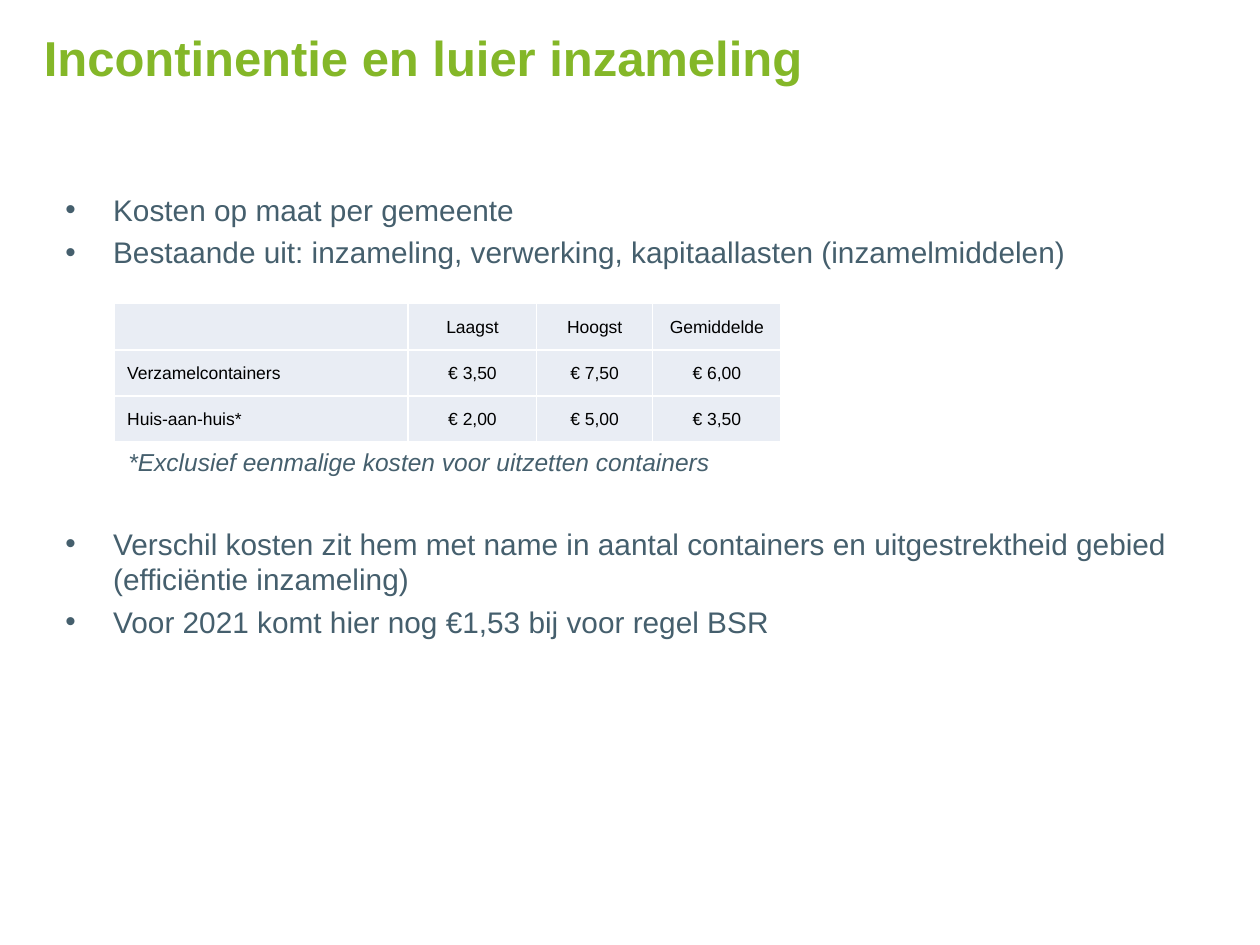
from dataclasses import dataclass

from lxml.etree import SubElement
from pptx import Presentation
from pptx.dml.color import RGBColor
from pptx.enum.text import MSO_ANCHOR, PP_ALIGN
from pptx.oxml.ns import qn
from pptx.util import Inches, Pt

FONT = "Arial"
GREEN, SLATE, BLACK, WHITE, PALE = "84B728", "455F6D", "000000", "FFFFFF", "E9EDF4"


@dataclass
class TextBlock:
    left: float
    top: float
    width: float
    height: float
    lines: list[str]
    size: float = 17
    color: str = SLATE
    bold: bool = False
    italic: bool = False
    bullets: bool = False


def rgb(color: str) -> RGBColor:
    return RGBColor.from_string(color)


def style(paragraph, size: float, color: str, bold=False, italic=False) -> None:
    font = paragraph.font
    font.name, font.size = FONT, Pt(size)
    font.bold, font.italic = bold, italic
    font.color.rgb = rgb(color)


def add_bullet(paragraph) -> None:
    properties = paragraph._p.get_or_add_pPr()
    properties.set("marL", str(Inches(0.38)))
    properties.set("indent", str(-Inches(0.38)))
    SubElement(properties, qn("a:buFont"), typeface=FONT)
    SubElement(properties, qn("a:buChar"), char="•")


def draw_text(slide, block: TextBlock) -> None:
    box = slide.shapes.add_textbox(Inches(block.left), Inches(block.top),
                                   Inches(block.width), Inches(block.height))
    frame = box.text_frame
    frame.word_wrap = True
    for index, line in enumerate(block.lines):
        paragraph = frame.add_paragraph() if index else frame.paragraphs[0]
        paragraph.text = line
        if block.bullets:
            add_bullet(paragraph)
        if index:
            paragraph.space_before = Pt(4)
        style(paragraph, block.size, block.color, block.bold, block.italic)


def set_borders(cell, color: str) -> None:
    properties = cell._tc.get_or_add_tcPr()
    for position, side in enumerate(("a:lnL", "a:lnR", "a:lnT", "a:lnB")):
        line = SubElement(properties, qn(side), w=str(Pt(1)))
        properties.insert(position, line)
        fill = SubElement(line, qn("a:solidFill"))
        SubElement(fill, qn("a:srgbClr"), val=color)


def draw_cost_table(slide, rows: list[list[str]], widths: list[float]) -> None:
    table = slide.shapes.add_table(len(rows), len(widths), Inches(0.91), Inches(2.41),
                                   Inches(sum(widths)), Inches(1.1)).table
    table.first_row = table.horz_banding = False
    for column, width in zip(table.columns, widths):
        column.width = Inches(width)
    for r, row in enumerate(rows):
        for c, text in enumerate(row):
            cell = table.cell(r, c)
            cell.fill.solid()
            cell.fill.fore_color.rgb = rgb(PALE)
            set_borders(cell, WHITE)
            cell.vertical_anchor = MSO_ANCHOR.MIDDLE
            cell.margin_left = Inches(0.01 if c else 0.1)
            cell.margin_right = cell.margin_top = Inches(0.01)
            cell.margin_bottom = 0
            paragraph = cell.text_frame.paragraphs[0]
            paragraph.text = text
            paragraph.alignment = PP_ALIGN.CENTER if c else PP_ALIGN.LEFT
            style(paragraph, 10, BLACK)


TEXTS = [
    # Title
    TextBlock(0.25, 0.17, 8.33, 1.17, ["Incontinentie en luier inzameling"],
              size=28, color=GREEN, bold=True),
    # Cost make-up, above the table
    TextBlock(0.42, 1.47, 9.16, 0.8, [
        "Kosten op maat per gemeente",
        "Bestaande uit: inzameling, verwerking, kapitaallasten (inzamelmiddelen)",
    ], bullets=True),
    # Table footnote
    TextBlock(0.92, 3.5, 8.66, 0.35,
              ["*Exclusief eenmalige kosten voor uitzetten containers"], size=14, italic=True),
    # Explanation, below the table
    TextBlock(0.42, 4.12, 9.16, 1.1, [
        "Verschil kosten zit hem met name in aantal containers en uitgestrektheid gebied "
        "(efficiëntie inzameling)",
        "Voor 2021 komt hier nog €1,53 bij voor regel BSR",
    ], bullets=True),
]

COSTS = [
    ["", "Laagst", "Hoogst", "Gemiddelde"],
    ["Verzamelcontainers", "€ 3,50", "€ 7,50", "€ 6,00"],
    ["Huis-aan-huis*", "€ 2,00", "€ 5,00", "€ 3,50"],
]


def main() -> None:
    presentation = Presentation()
    presentation.slide_width, presentation.slide_height = Inches(10), Inches(7.5)
    slide = presentation.slides.add_slide(presentation.slide_layouts[6])
    for block in TEXTS:
        draw_text(slide, block)
    draw_cost_table(slide, COSTS, [2.33, 1.02, 0.92, 1.02])
    presentation.save("out.pptx")


if __name__ == "__main__":
    main()
